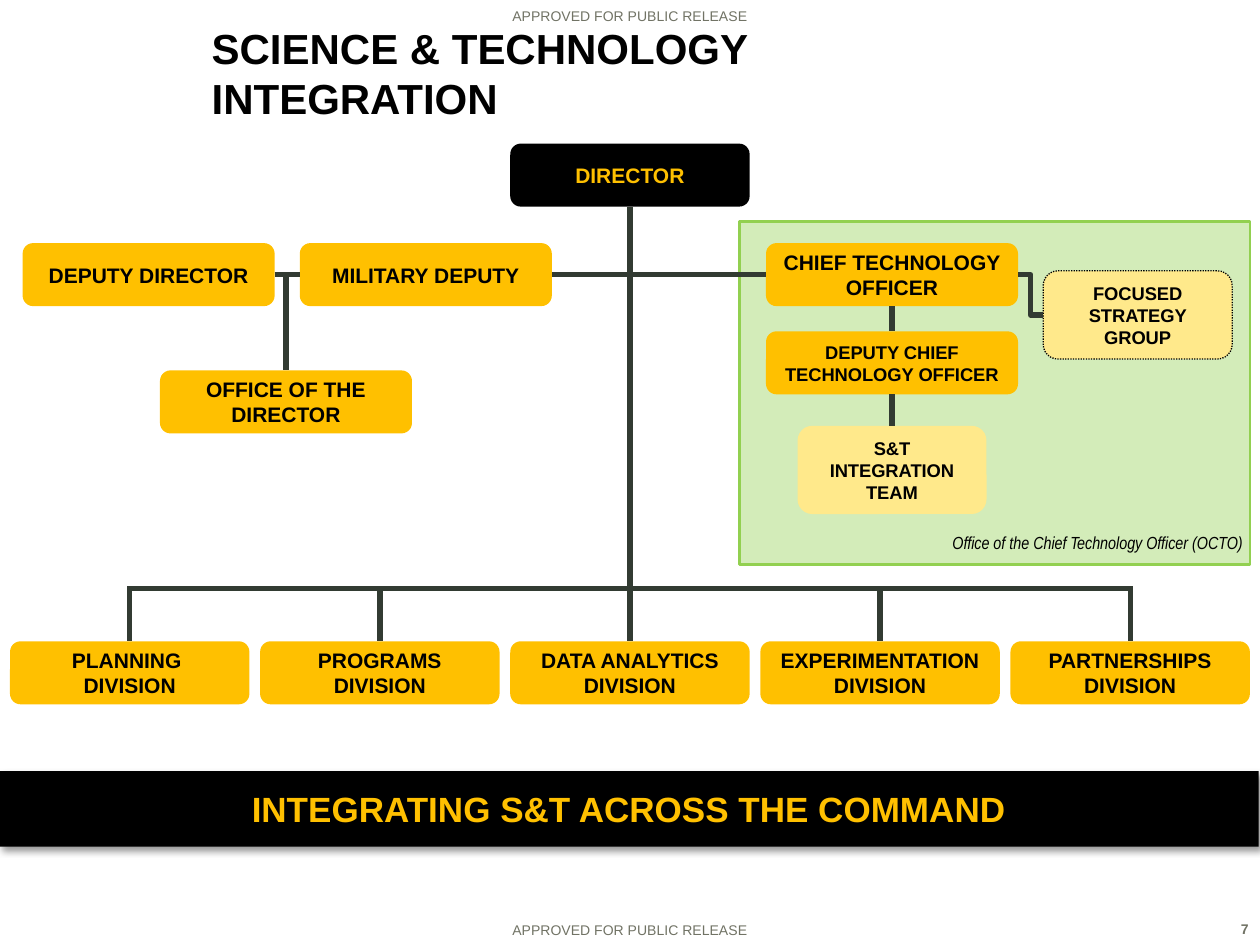
from dataclasses import dataclass

import pptx
import pptx.dml.color
import pptx.enum.dml
import pptx.enum.shapes
import pptx.enum.text
import pptx.oxml
import pptx.oxml.ns
import pptx.util

Inches = pptx.util.Inches
Pt = pptx.util.Pt
RGBColor = pptx.dml.color.RGBColor
Align = pptx.enum.text.PP_ALIGN
Anchor = pptx.enum.text.MSO_ANCHOR
Kind = pptx.enum.shapes.MSO_SHAPE
Link = pptx.enum.shapes.MSO_CONNECTOR

BLACK = RGBColor(0x00, 0x00, 0x00)
GOLD = RGBColor(0xFF, 0xC0, 0x00)
CREAM = RGBColor(0xFF, 0xE9, 0x8B)
GREEN = RGBColor(0x92, 0xD0, 0x50)
SLATE = RGBColor(0x32, 0x3B, 0x32)
GRAY = RGBColor(0x71, 0x73, 0x65)

TOP, LEFT, BOTTOM, RIGHT = range(4)
NS = 'xmlns:a="http://schemas.openxmlformats.org/drawingml/2006/main"'


@dataclass
class Box:
    text: str
    x: float
    y: float
    w: float = 2
    h: float = 0.5
    size: float = 12
    fill: RGBColor = GOLD
    ink: RGBColor = BLACK
    dots: bool = False


@dataclass
class Note:
    text: str
    x: float
    y: float
    w: float
    h: float
    size: float = 8
    font: str = "Arial"
    ink: RGBColor = GRAY
    align: Align = Align.CENTER
    anchor: Anchor = Anchor.BOTTOM
    bold: bool = False
    slant: bool = False


PITCH = 1.985
ROW_Y = 5.09
BUS_Y = 4.67
MID_X = 5
DEPUTY_Y = 1.93
CHIEF_X = 6.08
HALF = 0.02  # half the width of a connecting line

DIVISIONS = ["PLANNING \nDIVISION", "PROGRAMS DIVISION", "DATA ANALYTICS DIVISION",
             "EXPERIMENTATION DIVISION", "PARTNERSHIPS DIVISION"]

BOXES = {
    "head": Box("DIRECTOR", 4.05, 1.14, 1.9, fill=BLACK, ink=GOLD),
    "deputy": Box("DEPUTY DIRECTOR", 0.18, DEPUTY_Y),
    "military": Box("MILITARY DEPUTY", 2.38, DEPUTY_Y),
    "office": Box("OFFICE OF THE DIRECTOR", 1.27, 2.94),
    "chief": Box("CHIEF TECHNOLOGY OFFICER", CHIEF_X, DEPUTY_Y),
    "second": Box("DEPUTY CHIEF TECHNOLOGY OFFICER", CHIEF_X, 2.63, size=10.5),
    "team": Box("S&T INTEGRATION TEAM", 6.33, 3.38, 1.5, 0.7, 10.5, CREAM),
    "focus": Box("FOCUSED STRATEGY GROUP", 8.28, 2.15, 1.5, 0.7, 10.5, CREAM, dots=True),
}

NOTES = [
    Note("APPROVED FOR PUBLIC RELEASE", 1.5, 7.26, 7, 0.24),
    Note("APPROVED FOR PUBLIC RELEASE", 0, 0, 10, 0.24),
    Note("7", 9.55, 7.26, 0.46, 0.24, align=Align.RIGHT, anchor=Anchor.TOP, bold=True),
    Note("Office of the Chief Technology Officer (OCTO)", 7.42, 4.17, 2.58, 0.27, 10,
         "Arial Narrow", BLACK, anchor=Anchor.TOP, slant=True),
]


def write(frame, text: str, size: float, ink: RGBColor, align=Align.CENTER,
          anchor=Anchor.MIDDLE, font: str = "Arial", bold: bool = True,
          slant: bool = False) -> None:
    frame.word_wrap = True
    frame.auto_size = pptx.enum.text.MSO_AUTO_SIZE.NONE
    frame.vertical_anchor = anchor
    para = frame.paragraphs[0]
    para.alignment = align
    for index, line in enumerate(text.split("\n")):
        if index:
            para.add_line_break()
        run = para.add_run()
        run.text = line
        run.font.name = font
        run.font.size = Pt(size)
        run.font.bold = bold
        run.font.italic = slant
        run.font.color.rgb = ink


def block(slide, kind, x: float, y: float, w: float, h: float, fill: RGBColor):
    """Add a filled shape with no outline and no shadow."""
    shape = slide.shapes.add_shape(kind, Inches(x), Inches(y), Inches(w), Inches(h))
    shape.shadow.inherit = False
    shape.fill.solid()
    shape.fill.fore_color.rgb = fill
    shape.line.fill.background()
    return shape


def draw_box(slide, box: Box):
    shape = block(slide, Kind.ROUNDED_RECTANGLE, box.x, box.y, box.w, box.h, box.fill)
    if box.dots:
        shape.line.color.rgb = BLACK
        shape.line.width = Pt(0.75)
        shape.line.dash_style = pptx.enum.dml.MSO_LINE.ROUND_DOT
    write(shape.text_frame, box.text, box.size, box.ink)
    return shape


def draw_note(slide, note: Note) -> None:
    area = slide.shapes.add_textbox(Inches(note.x), Inches(note.y),
                                    Inches(note.w), Inches(note.h))
    write(area.text_frame, note.text, note.size, note.ink, note.align,
          note.anchor, note.font, note.bold, note.slant)


def draw_line(slide, x1: float = 0, y1: float = 0, x2: float = 0, y2: float = 0,
              start=None, end=None, kind=Link.STRAIGHT) -> None:
    """Draw a line; start and end are optional (shape, side) pairs to join."""
    line = slide.shapes.add_connector(kind, Inches(x1), Inches(y1), Inches(x2), Inches(y2))
    if start:
        line.begin_connect(*start)
    if end:
        line.end_connect(*end)
    line.line.color.rgb = SLATE
    line.line.width = Pt(3)
    line._element.spPr.append(pptx.oxml.parse_xml(f"<a:effectLst {NS}/>"))


def draw_panel(slide) -> None:
    panel = block(slide, Kind.RECTANGLE, 5.87, 1.76, 4.05, 2.72, GREEN)
    tint = panel._element.spPr.find(".//" + pptx.oxml.ns.qn("a:srgbClr"))
    tint.append(pptx.oxml.parse_xml(f'<a:alpha {NS} val="40000"/>'))
    panel.line.color.rgb = GREEN
    panel.line.width = Pt(1.5)


def draw_banner(slide) -> None:
    band = block(slide, Kind.RECTANGLE, -0.01, 6.12, 10, 0.6, BLACK)
    band._element.spPr.find(pptx.oxml.ns.qn("a:effectLst")).append(pptx.oxml.parse_xml(
        f'<a:outerShdw {NS} blurRad="{Pt(4)}" dist="{Pt(3)}" dir="2700000" algn="tl" '
        'rotWithShape="0"><a:srgbClr val="000000"><a:alpha val="40000"/></a:srgbClr>'
        '</a:outerShdw>'))
    write(band.text_frame, "INTEGRATING S&T ACROSS THE COMMAND", 20, GOLD)


def draw_links(slide, boxes: dict, row: list) -> None:
    draw_line(slide, start=(boxes["head"], BOTTOM), end=(row[2], TOP))
    for left, right in [("deputy", "military"), ("military", "chief")]:
        draw_line(slide, start=(boxes[left], RIGHT), end=(boxes[right], LEFT))
    for upper, lower in [("chief", "second"), ("second", "team")]:
        draw_line(slide, start=(boxes[upper], BOTTOM), end=(boxes[lower], TOP))
    draw_line(slide, start=(boxes["chief"], RIGHT), end=(boxes["focus"], LEFT),
              kind=Link.ELBOW)
    draw_line(slide, 2.27, DEPUTY_Y + 0.25, end=(boxes["office"], TOP))
    reach = 2 * PITCH + HALF
    draw_line(slide, MID_X - reach, BUS_Y, MID_X + reach, BUS_Y)
    for index in (0, 1, 3, 4):
        draw_line(slide, MID_X + (index - 2) * PITCH, BUS_Y, end=(row[index], TOP))


def main() -> None:
    deck = pptx.Presentation()
    deck.slide_width, deck.slide_height = Inches(10), Inches(7.5)
    slide = deck.slides.add_slide(deck.slide_layouts[5])
    title = slide.shapes.title
    title.left, title.top = Inches(1.58), Inches(0.3)
    title.width, title.height = Inches(6.5), Inches(0.55)
    write(title.text_frame, "SCIENCE & TECHNOLOGY INTEGRATION", 24, BLACK, Align.LEFT)

    draw_panel(slide)
    boxes = {name: draw_box(slide, box) for name, box in BOXES.items()}
    row = [draw_box(slide, Box(text, 0.08 + index * PITCH, ROW_Y, 1.9))
           for index, text in enumerate(DIVISIONS)]
    draw_links(slide, boxes, row)
    for note in NOTES:
        draw_note(slide, note)
    draw_banner(slide)
    deck.save("out.pptx")


if __name__ == "__main__":
    main()
